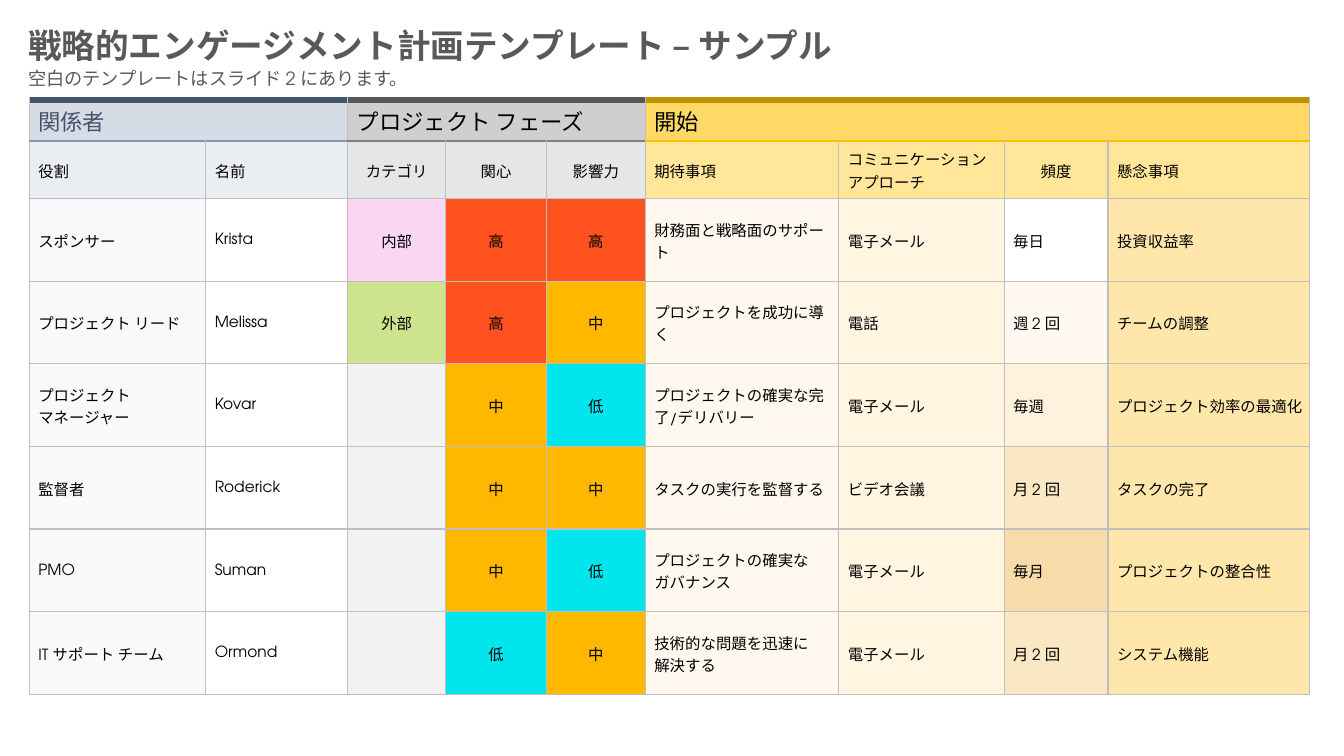
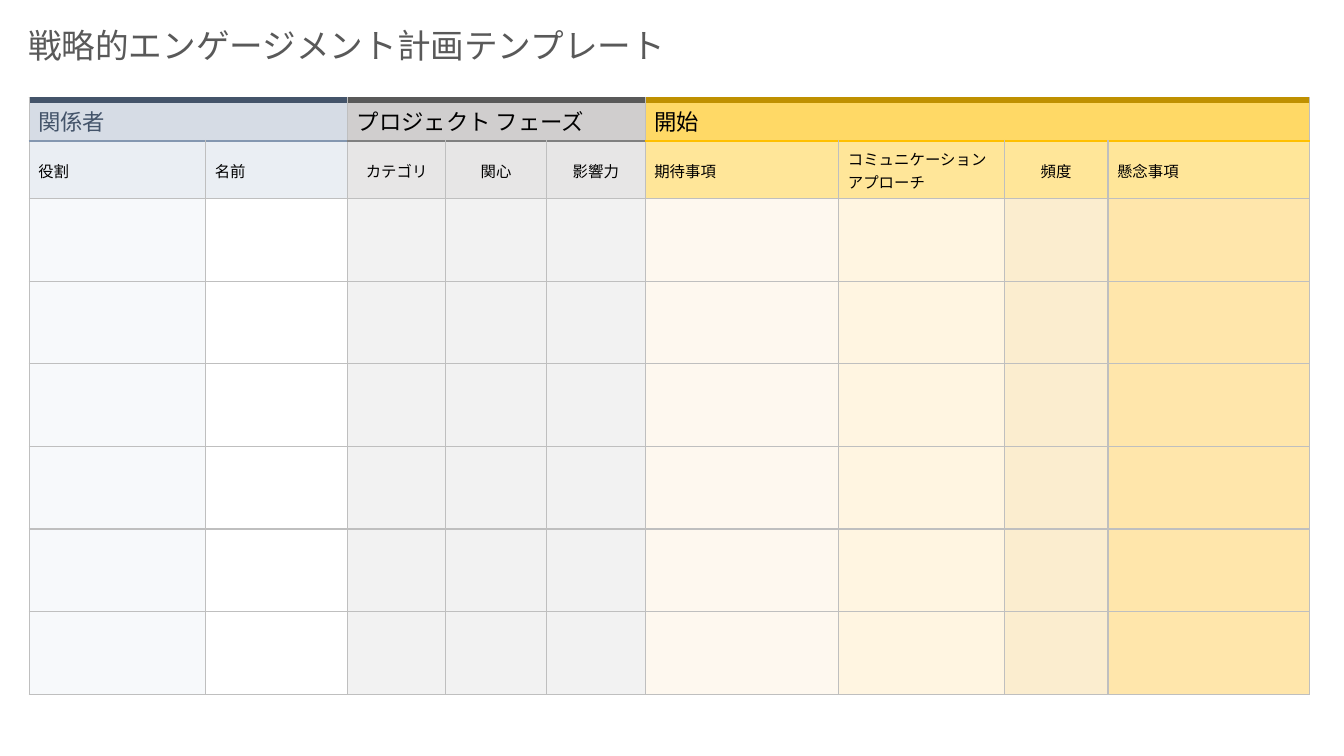
from dataclasses import dataclass

from lxml.etree import SubElement
from pptx import Presentation
from pptx.dml.color import RGBColor
from pptx.enum.text import MSO_ANCHOR, MSO_AUTO_SIZE, PP_ALIGN
from pptx.oxml.ns import qn
from pptx.util import Inches, Pt


@dataclass(frozen=True)
class Theme:
    font: str = "TeX Gyre Adventor"
    title_size: int = 24
    subtitle_size: int = 13
    group_size: int = 16
    body_size: int = 11
    gray: str = "595959"
    navy: str = "44546A"
    black: str = "000000"
    grid: str = "BFBFBF"
    grid_width: float = 1
    rule_width: float = 2.25
    band_width: float = 4.5


THEME = Theme()

# Column groups: label, text colour, fill, top band, rule below, heading fill, column count
GROUPS = [
    ("関係者", THEME.navy, "D6DCE5", "44546A", "8497B0", "EAEEF3", 2),
    ("プロジェクト フェーズ", THEME.black, "D0CECE", "595959", "808080", "E7E6E6", 3),
    ("開始", THEME.black, "FFD966", "BF9000", "FFC000", "FFE699", 4),
]

# Columns: heading, width, empty fill, heading centred, body centred
COLUMNS = [
    ("役割", 1.75, "F7F9FB", False, False),
    ("名前", 1.41, "FFFFFF", False, False),
    ("カテゴリ", 0.97, "F2F2F2", True, True),
    ("関心", 1, "F2F2F2", True, True),
    ("影響力", 0.98, "F2F2F2", True, True),
    ("期待事項", 1.92, "FEF8EF", False, False),
    ("コミュニケーション\nアプローチ", 1.64, "FFF5E1", False, False),
    ("頻度", 1.03, "FBEDCF", True, False),
    ("懸念事項", 2, "FFE6AB", False, False),
]
ROW_HEIGHTS = [0.41, 0.57] + [0.82] * 6

# Values that colour their own cell
VALUE_FILLS = {
    "内部": "FAD6F3", "外部": "CEE38D",
    "高": "FF521F", "中": "FFB700", "低": "01E5EC",
    "毎日": "FFFFFF", "週 2 回": "FFF9F1", "毎週": "FEF2DE",
    "月 2 回": "F9E8C3", "毎月": "F7DBAB",
}

STAKEHOLDERS = [
    ("スポンサー", "Krista", "内部", "高", "高",
     "財務面と戦略面のサポート", "電子メール", "毎日", "投資収益率"),
    ("プロジェクト リード", "Melissa", "外部", "高", "中",
     "プロジェクトを成功に導く", "電話", "週 2 回", "チームの調整"),
    ("プロジェクト\nマネージャー", "Kovar", "", "中", "低",
     "プロジェクトの確実な完了/デリバリー", "電子メール", "毎週", "プロジェクト効率の最適化"),
    ("監督者", "Roderick", "", "中", "中",
     "タスクの実行を監督する", "ビデオ会議", "月 2 回", "タスクの完了"),
    ("PMO", "Suman", "", "中", "低",
     "プロジェクトの確実な\nガバナンス", "電子メール", "毎月", "プロジェクトの整合性"),
    ("IT サポート チーム", "Ormond", "", "低", "中",
     "技術的な問題を迅速に\n解決する", "電子メール", "月 2 回", "システム機能"),
]
BLANK_ROWS = [("",) * len(COLUMNS)] * len(STAKEHOLDERS)

# Slides: title, bold title, subtitle, table rows
SLIDES = [
    ("戦略的エンゲージメント計画テンプレート – サンプル", True,
     "空白のテンプレートはスライド 2 にあります。", STAKEHOLDERS),
    ("戦略的エンゲージメント計画テンプレート", False, "", BLANK_ROWS),
]


def write(frame, text, size, color, bold=False, centered=False):
    paragraph = frame.paragraphs[0]
    paragraph.text = text
    paragraph.alignment = PP_ALIGN.CENTER if centered else PP_ALIGN.LEFT
    for run in paragraph.runs:
        run.font.name = THEME.font
        run.font.size = Pt(size)
        run.font.bold = bold
        run.font.color.rgb = RGBColor.from_string(color)


def style_cell(cell, fill, centered=False, top=None, bottom=None):
    """Set margins, borders and fill; top and bottom are (colour, points)."""
    cell.vertical_anchor = MSO_ANCHOR.MIDDLE
    cell.margin_left = Inches(0.01 if centered else 0.09)
    cell.margin_right = cell.margin_top = Inches(0.01)
    cell.margin_bottom = 0
    grid = (THEME.grid, THEME.grid_width)
    properties = cell._tc.get_or_add_tcPr()
    borders = {"L": grid, "R": grid, "T": top or grid, "B": bottom or grid}
    for side, (color, width) in borders.items():
        line = SubElement(properties, qn(f"a:ln{side}"), w=str(Pt(width)))
        line_fill = SubElement(line, qn("a:solidFill"))
        SubElement(line_fill, qn("a:srgbClr"), val=color)
    cell.fill.solid()
    cell.fill.fore_color.rgb = RGBColor.from_string(fill)


prs = Presentation()
prs.slide_width = Inches(13.33)
prs.slide_height = Inches(7.5)

for title, title_bold, subtitle, body_rows in SLIDES:
    slide = prs.slides.add_slide(prs.slide_layouts[6])

    # Title and subtitle
    headings = [
        (title, 0.2, 9.13, 0.5, THEME.title_size, title_bold),
        (subtitle, 0.62, 4.63, 0.32, THEME.subtitle_size, False),
    ]
    for text, top, width, height, size, bold in headings:
        if text:
            heading = slide.shapes.add_textbox(
                Inches(0.18), Inches(top), Inches(width), Inches(height))
            heading.text_frame.word_wrap = True
            heading.text_frame.auto_size = MSO_AUTO_SIZE.SHAPE_TO_FIT_TEXT
            write(heading.text_frame, text, size, THEME.gray, bold)

    # Table grid
    plan = slide.shapes.add_table(
        len(ROW_HEIGHTS), len(COLUMNS), Inches(0.29), Inches(0.99),
        Inches(12.7), Inches(sum(ROW_HEIGHTS))).table
    plan.first_row = plan.horz_banding = False
    for column, (_, width, *_) in zip(plan.columns, COLUMNS):
        column.width = Inches(width)
    for row, height in zip(plan.rows, ROW_HEIGHTS):
        row.height = Inches(height)

    # Group bands and column headings
    first = 0
    for label, label_color, fill, band, rule, heading_fill, count in GROUPS:
        rule_line = (rule, THEME.rule_width)
        for index in range(first, first + count):
            style_cell(plan.cell(0, index), fill,
                       top=(band, THEME.band_width), bottom=rule_line)
            name, _, _, centered, _ = COLUMNS[index]
            column_heading = plan.cell(1, index)
            style_cell(column_heading, heading_fill, centered, top=rule_line)
            write(column_heading.text_frame, name, THEME.body_size, THEME.black,
                  centered=centered)
        group = plan.cell(0, first)
        group.merge(plan.cell(0, first + count - 1))
        write(group.text_frame, label, THEME.group_size, label_color)
        first += count

    # Stakeholder rows
    for row_index, values in enumerate(body_rows, start=2):
        for index, value in enumerate(values):
            _, _, empty_fill, _, centered = COLUMNS[index]
            cell = plan.cell(row_index, index)
            style_cell(cell, VALUE_FILLS.get(value, empty_fill), centered)
            write(cell.text_frame, value, THEME.body_size, THEME.black,
                  centered=centered)

prs.save("out.pptx")
